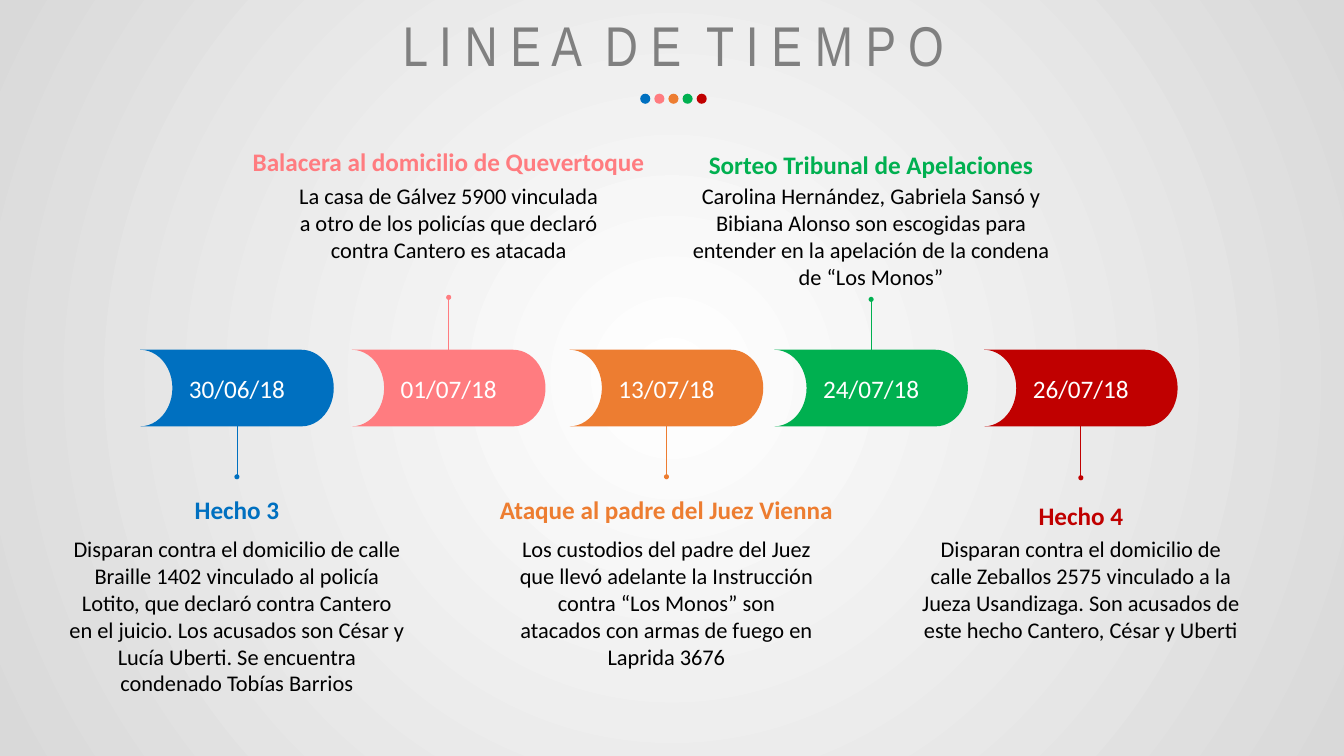
from lxml import etree
from pptx import Presentation
from pptx.dml.color import RGBColor
from pptx.enum import shapes, text
from pptx.oxml.ns import qn
from pptx.util import Inches, Pt

TITLE = "L I N E A  D E  T I E M P O"

# date, colour, pill left, stem shift, (heading, top, width), (body, width, height)
EVENTS = [
    ("30/06/18", "blue", 1.39, 0, ("Hecho 3", 4.86, 2.72),
     ("Disparan contra el domicilio de calle Braille 1402 vinculado al policía "
      "Lotito, que declaró contra Cantero en el juicio. Los acusados son César y "
      "Lucía Uberti. Se encuentra condenado Tobías Barrios", 3.53, 1.72)),
    ("01/07/18", "pink", 3.49, 0, ("Balacera al domicilio de Quevertoque", 1.4, 4.11),
     ("La casa de Gálvez 5900 vinculada a otro de los policías que declaró "
      "contra Cantero es atacada", 3.18, 0.91)),
    ("13/07/18", "orange", 5.65, 0, ("Ataque al padre del Juez Vienna", 4.86, 3.53),
     ("Los custodios del padre del Juez que llevó adelante la Instrucción contra "
      "“Los Monos” son atacados con armas de fuego en Laprida 3676", 3.16, 1.45)),
    ("24/07/18", "green", 7.68, 0.02, ("Sorteo Tribunal de Apelaciones", 1.43, 4.36),
     ("Carolina Hernández, Gabriela Sansó y Bibiana Alonso son escogidas para "
      "entender en la apelación de la condena de “Los Monos”", 3.95, 1.18)),
    ("26/07/18", "red", 9.76, 0.01, ("Hecho 4", 4.91, 2.25),
     ("Disparan contra el domicilio de calle Zeballos 2575 vinculado a la Jueza "
      "Usandizaga. Son acusados de este hecho Cantero, César y Uberti", 3.39, 1.18)),
]

THEME = {
    "blue": "0070C0", "pink": "FF7C80", "orange": "ED7D31", "green": "00B050",
    "red": "C00000", "gray": "808080", "white": "FFFFFF", "black": "000000",
    "edge": "D9D9D9", "font": "Calibri", "narrow": "Arial Narrow",
    "title": 40, "head": 18, "body": 16,
}
PILL_W, PILL_H, PILL_Y = 1.92, 0.76, 3.47
STEM = 0.52
BODY_Y = {"up": 1.76, "down": 5.26}
STEM_Y = {"up": 2.95, "down": 4.21}
MID = 6.68

deck = Presentation()
deck.slide_width, deck.slide_height = Inches(13.33), Inches(7.5)
slide = deck.slides.add_slide(deck.slide_layouts[6])


def color(name):
    return RGBColor.from_string(THEME[name])


def style(frame, words, size, tint, bold=False, font="font"):
    frame.text = words
    line = frame.paragraphs[0]
    line.alignment = text.PP_ALIGN.CENTER
    face = line.runs[0].font
    face.name, face.size, face.bold = THEME[font], Pt(THEME[size]), bold
    face.color.rgb = color(tint)
    return line


def label(mid, top, width, height, words, *look, **more):
    """Add a wrapped text box centred on mid."""
    box = slide.shapes.add_textbox(
        Inches(mid - width / 2), Inches(top), Inches(width), Inches(height))
    box.text_frame.word_wrap = True
    style(box.text_frame, words, *look, **more)
    return box.text_frame


def solid(kind, left, top, width, height, tint):
    shape = slide.shapes.add_shape(
        kind, Inches(left), Inches(top), Inches(width), Inches(height))
    shape.shadow.inherit = False
    shape.fill.solid()
    shape.fill.fore_color.rgb = color(tint)
    shape.line.fill.background()
    return shape


def dot(mid, center, size, tint):
    solid(shapes.MSO_SHAPE.OVAL, mid - size / 2, center - size / 2, size, size, tint)


def stem(mid, top, tint):
    line = slide.shapes.add_connector(
        shapes.MSO_CONNECTOR.STRAIGHT,
        Inches(mid), Inches(top), Inches(mid), Inches(top + STEM))
    line.line.color.rgb = color(tint)
    line.line.width = Pt(0.5)
    etree.SubElement(line._element.spPr, qn("a:effectLst"))


def backdrop():
    """Fill the background with a radial gradient, white in the middle."""
    fill = slide.background.fill
    fill.gradient()
    for stop, place, tint in zip(fill.gradient_stops, (0, 1), ("white", "edge")):
        stop.position = place
        stop.color.rgb = color(tint)
    grad = slide._element.find(".//" + qn("a:gradFill"))
    grad.remove(grad.find(qn("a:lin")))
    ring = etree.SubElement(grad, qn("a:path"), {"path": "circle"})
    etree.SubElement(ring, qn("a:fillToRect"), dict.fromkeys("ltrb", "50000"))


def event(date, tint, left, shift, head, body, side):
    mid = left + PILL_W / 2
    pill = solid(shapes.MSO_SHAPE.FLOWCHART_STORED_DATA,
                 left, PILL_Y, PILL_W, PILL_H, tint)
    pill._element.spPr.xfrm.set("flipH", "1")
    pill.text_frame.vertical_anchor = text.MSO_ANCHOR.MIDDLE
    style(pill.text_frame, date, "head", "white")

    top = STEM_Y[side] + shift
    stem(mid, top, tint)
    dot(mid, top if side == "up" else top + STEM, 0.05, tint)

    words, head_y, width = head
    label(mid, head_y, width, 0.4, words, "head", tint, bold=True)
    words, width, height = body
    label(mid, BODY_Y[side], width, height, words, "body", "black")


backdrop()
title = label(MID, 0.09, 8.83, 0.74, TITLE, "title", "gray", font="narrow")
title.vertical_anchor = text.MSO_ANCHOR.BOTTOM
title.paragraphs[0].line_spacing = 0.9

for i, item in enumerate(EVENTS):
    event(*item, side="up" if i % 2 else "down")
    dot(MID + 0.14 * (i - 2), 0.98, 0.1, item[1])

deck.save("out.pptx")
